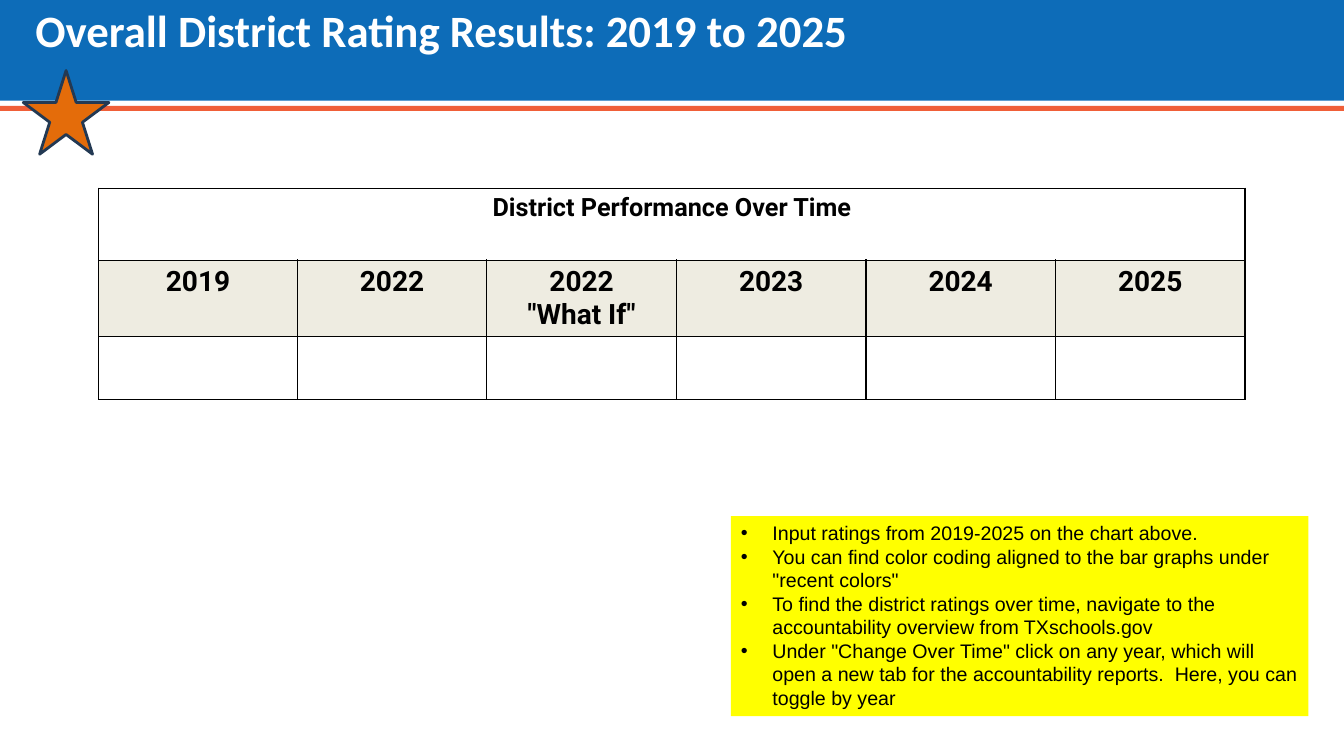
from lxml import etree
from pptx import Presentation
from pptx import util as u
from pptx.dml.color import RGBColor
from pptx.enum import shapes, text
from pptx.oxml import ns

Pt = u.Pt


def paint(fill, color):
    fill.solid()
    fill.fore_color.rgb = RGBColor.from_string(color)


def write(para, words, look):
    run = para.add_run()
    run.text = words
    for key, val in look.items():
        if key == "color":
            paint(run.font.fill, val)
        else:
            setattr(run.font, key, val)


deck = Presentation()
deck.slide_width, deck.slide_height = Pt(960), Pt(540)
slide = deck.slides.add_slide(deck.slide_layouts[1])
title, notes = slide.placeholders

for top, high, color in [(0, 72, "0D6CB8"), (75.6, 3.6, "F05F38")]:
    band = slide.shapes.add_shape(
        shapes.MSO_SHAPE.RECTANGLE, 0, Pt(top), Pt(960), Pt(high))
    band.shadow.inherit = False
    paint(band.fill, color)
    band.line.fill.background()
    title.element.addprevious(band.element)

places = [(title, 25.2, 2.2, 910, 77.8), (notes, 522, 368.6, 412.6, 143)]
for box, left, top, wide, high in places:
    box.left, box.top, box.width, box.height = map(Pt, (left, top, wide, high))
    frame = box.text_frame
    frame.word_wrap = True
    frame.auto_size = text.MSO_AUTO_SIZE.NONE
    frame.vertical_anchor = text.MSO_ANCHOR.TOP

frame = title.text_frame
for side in ["left", "top", "right", "bottom"]:
    setattr(frame, "margin_" + side, 0)
head = frame.paragraphs[0]
head.alignment = text.PP_ALIGN.LEFT
write(head, "Overall District Rating Results: 2019 to 2025",
      {"name": "Calibri", "size": Pt(32), "bold": True, "color": "FFFFFF"})

grid = slide.shapes.add_table(
    3, 6, Pt(70.6), Pt(134.4), Pt(819), Pt(151.2)).table
grid.first_row = grid.horz_banding = False
for col, wide in zip(grid.columns, [141.8] + [135.4] * 5):
    col.width = Pt(wide)
for row, high in zip(grid.rows, [51.4, 54.8, 45]):
    row.height = Pt(high)
grid.cell(0, 0).merge(grid.cell(0, 5))

years = ["2019", "2022", "2022\n\"What If\"", "2023", "2024", "2025"]
rows = [["District Performance Over Time"] + [""] * 5, years, [""] * 6]
styles = [(18, "FFFFFF"), (20, "EEECE1"), (18, "FFFFFF")]
for r, (labels, (size, color)) in enumerate(zip(rows, styles)):
    look = {"name": "Roboto", "size": Pt(size), "bold": True, "color": "000000"}
    for c, label in enumerate(labels):
        cell = grid.cell(r, c)
        props = cell._tc.get_or_add_tcPr()
        for edge in ["a:lnL", "a:lnR", "a:lnT", "a:lnB"]:
            line = etree.SubElement(props, ns.qn(edge), w=str(Pt(1)))
            ink = etree.SubElement(line, ns.qn("a:solidFill"))
            etree.SubElement(ink, ns.qn("a:srgbClr"), val="000000")
        paint(cell.fill, color)
        if label:
            cell.text_frame.text = "\n" * label.count("\n")
            for para, words in zip(cell.text_frame.paragraphs, label.split("\n")):
                para.alignment = text.PP_ALIGN.CENTER
                write(para, words, look)

star = slide.shapes.add_shape(
    shapes.MSO_SHAPE.STAR_5_POINT, Pt(16.6), Pt(50.4), Pt(61.2), Pt(59.8))
star.shadow.inherit = False
paint(star.fill, "E46C0A")
paint(star.line.fill, "233953")
star.line.width = Pt(2)

paint(notes.fill, "FFFF00")
steps = [
    "Input ratings from 2019-2025 on the chart above.",
    "You can find color coding aligned to the bar graphs under \"recent colors\"",
    "To find the district ratings over time, navigate to the accountability overview from TXschools.gov",
    "Under \"Change Over Time\" click on any year, which will open a new tab for the accountability reports.  Here, you can toggle by year",
]
frame = notes.text_frame
for i, step in enumerate(steps):
    para = frame.add_paragraph() if i else frame.paragraphs[0]
    props = para._p.get_or_add_pPr()
    props.set("marL", str(Pt(22.5)))
    props.set("indent", str(Pt(-22.5)))
    etree.SubElement(props, ns.qn("a:buChar"), char="•")
    para.space_before = Pt(0)
    write(para, step, {"name": "Arial", "size": Pt(14), "color": "000000"})

deck.save("out.pptx")
